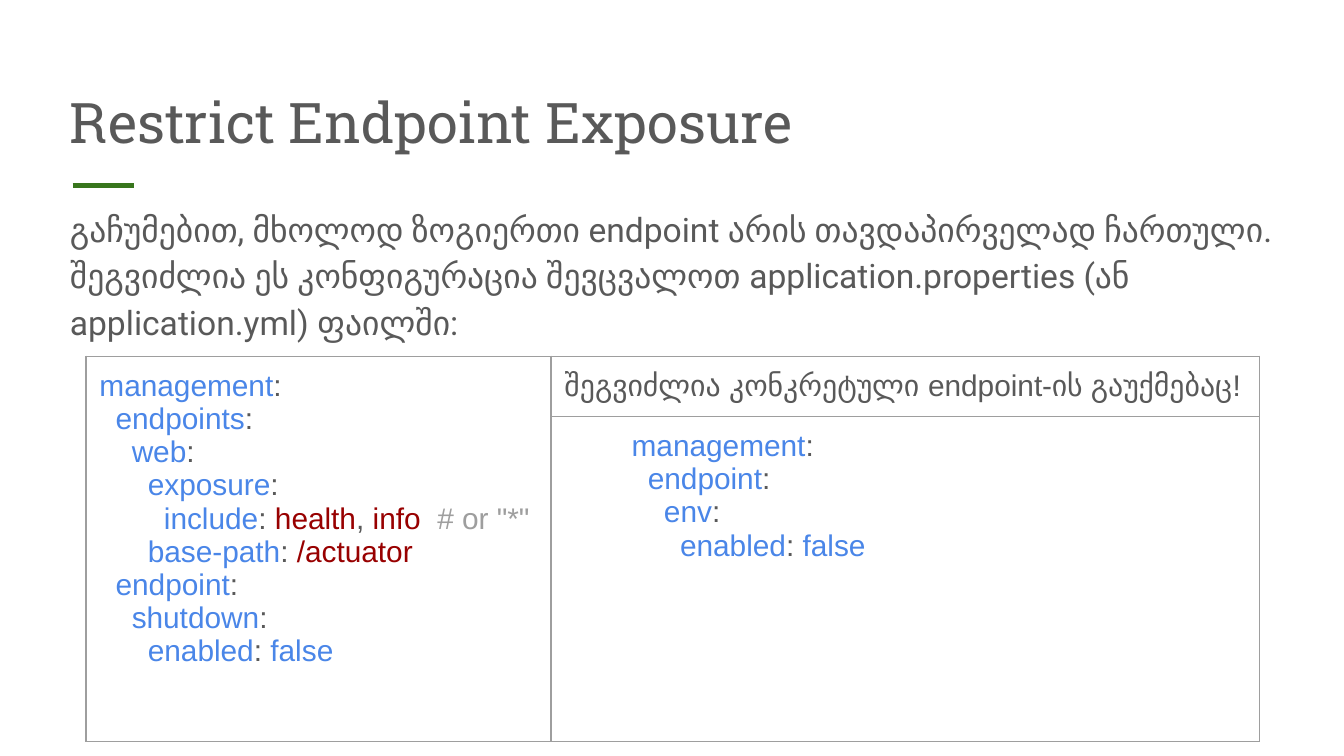
from lxml import etree
from pptx import Presentation
from pptx.dml.color import RGBColor
from pptx.enum.shapes import MSO_CONNECTOR
from pptx.enum.text import MSO_ANCHOR, MSO_AUTO_SIZE, PP_ALIGN
from pptx.oxml import parse_xml
from pptx.oxml.ns import nsdecls, qn
from pptx.util import Inches, Pt

STRAIGHT = MSO_CONNECTOR.STRAIGHT
TOP, BOTTOM = MSO_ANCHOR.TOP, MSO_ANCHOR.BOTTOM
NO_AUTOFIT = MSO_AUTO_SIZE.NONE
LEFT = PP_ALIGN.LEFT

THEME = {
    "text": "595959", "key": "4A86E8", "value": "980000",
    "muted": "9E9E9E", "accent": "38761D",
    "title_size": 30, "body_size": 18, "code_size": 16,
    "title_font": "Roboto Slab", "body_font": "Roboto", "code_font": "Arial",
}
INSET = Inches(0.1)
INDENT_STEP = 0.12

# Each line: nesting level, key, then the (text, colour) runs after the colon
EXPOSURE_LINES = [
    (0, "management", []),
    (1, "endpoints", []),
    (2, "web", []),
    (3, "exposure", []),
    (4, "include", [("health", "value"), (", ", "text"),
                    ("info  ", "value"), ('# or "*"', "muted")]),
    (3, "base-path", [("/actuator", "value")]),
    (1, "endpoint", []),
    (2, "shutdown", []),
    (3, "enabled", [("false", "key")]),
]
DISABLE_LINES = [
    (0, "management", []),
    (1, "endpoint", []),
    (2, "env", []),
    (3, "enabled", [("false", "key")]),
]


def format_run(run, kind, colour="text"):
    run.font.name = THEME[kind + "_font"]
    run.font.size = Pt(THEME[kind + "_size"])
    run.font.color.rgb = RGBColor.from_string(THEME[colour])


def write_code(text_frame, lines, margin=0):
    for index, (level, key, values) in enumerate(lines):
        paragraph = text_frame.paragraphs[0] if index == 0 else text_frame.add_paragraph()
        properties = paragraph._p.get_or_add_pPr()
        properties.set("marL", str(Inches(margin + level * INDENT_STEP)))
        properties.set("indent", "0")
        separator = ": " if values else ":"
        for text, colour in [(key, "key"), (separator, "text")] + values:
            run = paragraph.add_run()
            run.text = text
            format_run(run, "code", colour)


# Widescreen 16:9 slide
presentation = Presentation()
presentation.slide_width = Inches(10)
presentation.slide_height = Inches(10 * 9 / 16)
slide = presentation.slides.add_slide(presentation.slide_layouts[1])

# Title and introduction
title, body = slide.shapes.title, slide.placeholders[1]
for shape, kind, top, height, anchor, text in [
    (title, "title", 0.5, 0.75, BOTTOM, "Restrict Endpoint Exposure"),
    (body, "body", 1.41, 3.59, TOP,
     "გაჩუმებით, მხოლოდ ზოგიერთი endpoint არის თავდაპირველად ჩართული. "
     "შეგვიძლია ეს კონფიგურაცია შევცვალოთ application.properties "
     "(ან application.yml) ფაილში:"),
]:
    shape.left, shape.top = Inches(0.42), Inches(top)
    shape.width, shape.height = Inches(9.15), Inches(height)
    text_frame = shape.text_frame
    text_frame.text = text
    text_frame.word_wrap = True
    text_frame.auto_size = NO_AUTOFIT
    text_frame.vertical_anchor = anchor
    text_frame.margin_left = text_frame.margin_right = INSET
    text_frame.margin_top = text_frame.margin_bottom = INSET
    paragraph = text_frame.paragraphs[0]
    paragraph.alignment = LEFT
    paragraph.space_before = Pt(0)
    format_run(paragraph.runs[0], kind)

# Introduction is plain text without a bullet
introduction = body.text_frame.paragraphs[0]
introduction.line_spacing = 1.15
properties = introduction._p.get_or_add_pPr()
properties.set("marL", "0")
properties.set("indent", "0")
etree.SubElement(properties, qn("a:buNone"))

# Accent line under the title
accent = slide.shapes.add_connector(STRAIGHT, Inches(0.54), Inches(1.38), Inches(1), Inches(1.38))
accent.line.color.rgb = RGBColor.from_string(THEME["accent"])
accent.line.width = Pt(3)
etree.SubElement(accent._element.spPr, qn("a:effectLst"))

# Configuration table
column_widths, row_heights = [3.46, 5.27], [0.43, 1.91]
table = slide.shapes.add_table(
    2, 2, Inches(0.64), Inches(2.65),
    Inches(sum(column_widths)), Inches(sum(row_heights))).table
table.first_row = table.horz_banding = False
for column, width in zip(table.columns, column_widths):
    column.width = Inches(width)
for row, height in zip(table.rows, row_heights):
    row.height = Inches(height)

for cell in table.iter_cells():
    cell.fill.background()
    cell.margin_left = cell.margin_right = INSET
    cell.margin_top = cell.margin_bottom = INSET
    cell_properties = cell._tc.get_or_add_tcPr()
    for position, side in enumerate(["lnL", "lnR", "lnT", "lnB"]):
        cell_properties.insert(position, parse_xml(
            f'<a:{side} {nsdecls("a")} w="{Pt(0.75)}"><a:solidFill>'
            f'<a:srgbClr val="{THEME["muted"]}"/></a:solidFill></a:{side}>'))

table.cell(0, 0).merge(table.cell(1, 0))
write_code(table.cell(0, 0).text_frame, EXPOSURE_LINES)
write_code(table.cell(1, 1).text_frame, DISABLE_LINES, margin=0.5)

heading = table.cell(0, 1).text_frame
heading.text = "შეგვიძლია კონკრეტული endpoint-ის გაუქმებაც!"
format_run(heading.paragraphs[0].runs[0], "code")

presentation.save("out.pptx")
